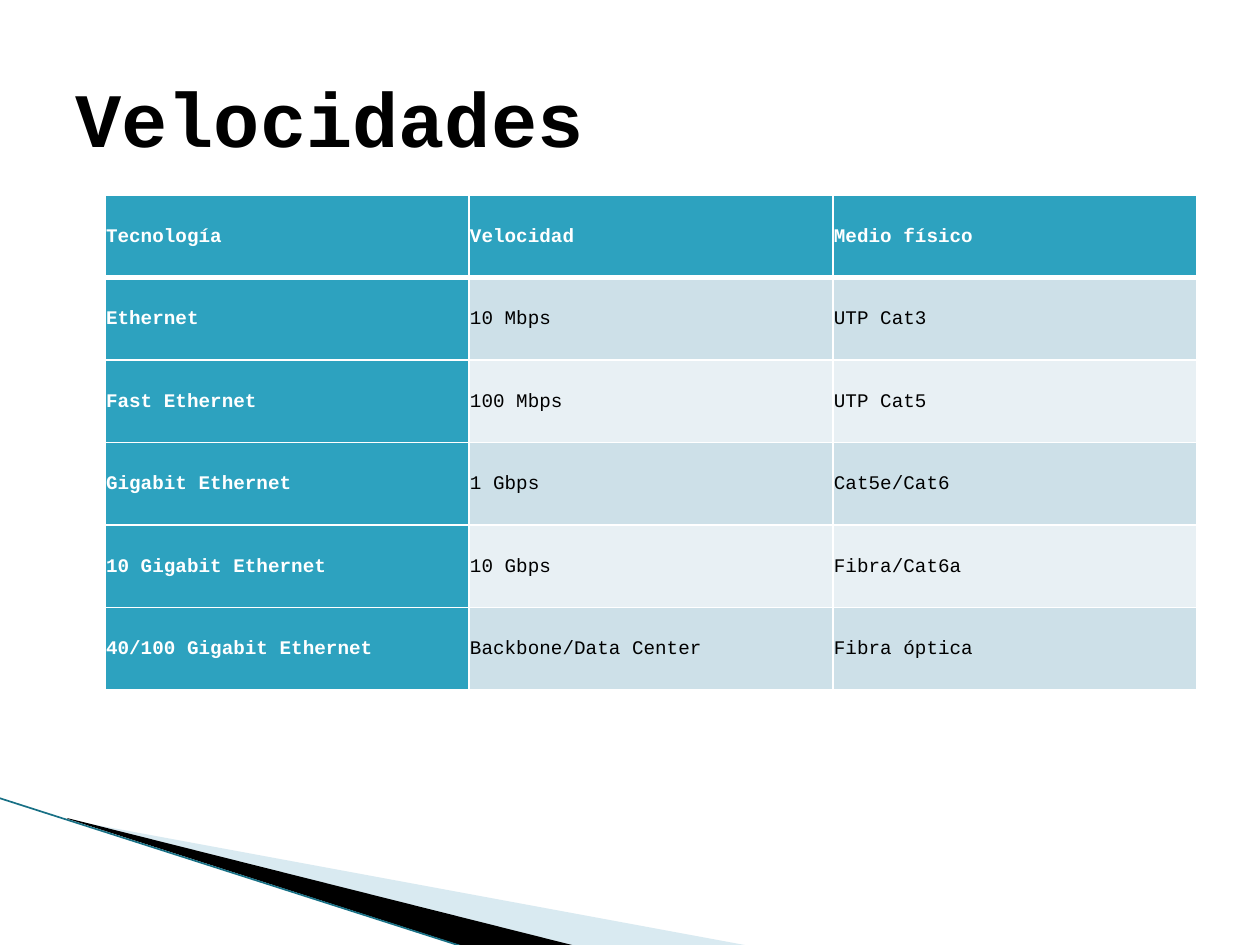
from typing import NamedTuple

import pptx
import pptx.dml.color
import pptx.enum.shapes
import pptx.enum.text
import pptx.oxml.ns
import pptx.util
from lxml import etree

EMU_PER_PX = 914400 / 126
FONT = "Courier New"
COLORS = {
    "black": "000000",
    "white": "FFFFFF",
    "accent": "2DA2BF",
    "band_dark": "CDE0E8",
    "band_light": "E8F0F4",
    "pale_blue": "A0CBDC",
    "edge": "187085",
}
ROWS = [
    ("Tecnología", "Velocidad", "Medio físico"),
    ("Ethernet", "10 Mbps", "UTP Cat3"),
    ("Fast Ethernet", "100 Mbps", "UTP Cat5"),
    ("Gigabit Ethernet", "1 Gbps", "Cat5e/Cat6"),
    ("10 Gigabit Ethernet", "10 Gbps", "Fibra/Cat6a"),
    ("40/100 Gigabit Ethernet", "Backbone/Data Center", "Fibra óptica"),
]


class Area(NamedTuple):
    left: int
    top: int
    width: int
    height: int


class Wedge(NamedTuple):
    points: list[tuple[int, int]]
    color: str
    opacity: int


WEDGES = [
    Wedge([(69, 820), (750, 946), (575, 946), (69, 819)], "pale_blue", 40),
    Wedge([(67, 818), (576, 946), (469, 948), (68, 819)], "black", 100),
]


def px(length: int) -> int:
    return pptx.util.Emu(round(length * EMU_PER_PX))


def rgb(name: str) -> pptx.dml.color.RGBColor:
    return pptx.dml.color.RGBColor.from_string(COLORS[name])


def add_child(parent, tag: str, **attributes: str):
    return etree.SubElement(parent, pptx.oxml.ns.qn(tag), **attributes)


def set_font(paragraph, size: int, color: str, bold: bool) -> None:
    font = paragraph.font
    font.name, font.size, font.bold = FONT, pptx.util.Pt(size), bold
    font.color.rgb = rgb(color)


def draw_wedge(page, wedge: Wedge) -> None:
    builder = page.shapes.build_freeform(*wedge.points[0], scale=EMU_PER_PX)
    builder.add_line_segments(wedge.points[1:], close=True)
    shape = builder.convert_to_shape()
    shape.shadow.inherit = False
    shape.fill.solid()
    shape.fill.fore_color.rgb = rgb(wedge.color)
    shape.line.fill.background()
    if wedge.opacity < 100:
        color = shape.fill._xPr.find(".//" + pptx.oxml.ns.qn("a:srgbClr"))
        add_child(color, "a:alpha", val=str(wedge.opacity * 1000))


def draw_edge(page, start: tuple[int, int], end: tuple[int, int]) -> None:
    edge = page.shapes.add_connector(
        pptx.enum.shapes.MSO_CONNECTOR.STRAIGHT, *map(px, start + end))
    edge.line.color.rgb = rgb("edge")
    edge.line.width = pptx.util.Pt(0.95)
    add_child(edge._element.spPr, "a:effectLst")


def set_borders(cell, row: int) -> None:
    widths = {"L": 1, "R": 1, "T": 3 if row == 1 else 1, "B": 3 if row == 0 else 1}
    for side, points in widths.items():
        border = add_child(cell._tc.get_or_add_tcPr(), f"a:ln{side}",
                           w=str(pptx.util.Pt(points)))
        add_child(add_child(border, "a:solidFill"), "a:srgbClr", val=COLORS["white"])


def fill_cell(cell, text: str, row: int, column: int) -> None:
    heading = row == 0 or column == 0
    band = "band_dark" if row % 2 else "band_light"
    set_borders(cell, row)
    cell.fill.solid()
    cell.fill.fore_color.rgb = rgb("accent" if heading else band)
    cell.vertical_anchor = pptx.enum.text.MSO_ANCHOR.MIDDLE
    cell.margin_left = cell.margin_right = px(1)
    cell.margin_top = cell.margin_bottom = px(1)
    cell.text = text
    para = cell.text_frame.paragraphs[0]
    para.line_spacing = 1.07
    para.space_after = pptx.util.Pt(8)
    set_font(para, 11, "white" if heading else "black", heading)


def draw_table(page, area: Area) -> None:
    frame = page.shapes.add_table(len(ROWS), len(ROWS[0]), *map(px, area))
    table = frame.table
    table.first_col = True
    for row, texts in enumerate(ROWS):
        for column, text in enumerate(texts):
            fill_cell(table.cell(row, column), text, row, column)


def draw_title(page, area: Area, text: str) -> None:
    box = page.shapes.add_textbox(*map(px, area))
    box.text_frame.word_wrap = True
    box.text_frame.vertical_anchor = pptx.enum.text.MSO_ANCHOR.MIDDLE
    para = box.text_frame.paragraphs[0]
    para.text = text
    set_font(para, 44, "black", True)


def main() -> None:
    deck = pptx.Presentation()
    deck.slide_width, deck.slide_height = px(1260), px(945)
    page = deck.slides.add_slide(deck.slide_layouts[6])

    # Corner decoration
    for wedge in WEDGES:
        draw_wedge(page, wedge)
    draw_edge(page, (-1, 798), (467, 948))

    # Speeds table and title
    draw_table(page, Area(105, 195, 1092, 495))
    draw_title(page, Area(63, 38, 1134, 157), "Velocidades")

    deck.save("out.pptx")


if __name__ == "__main__":
    main()
